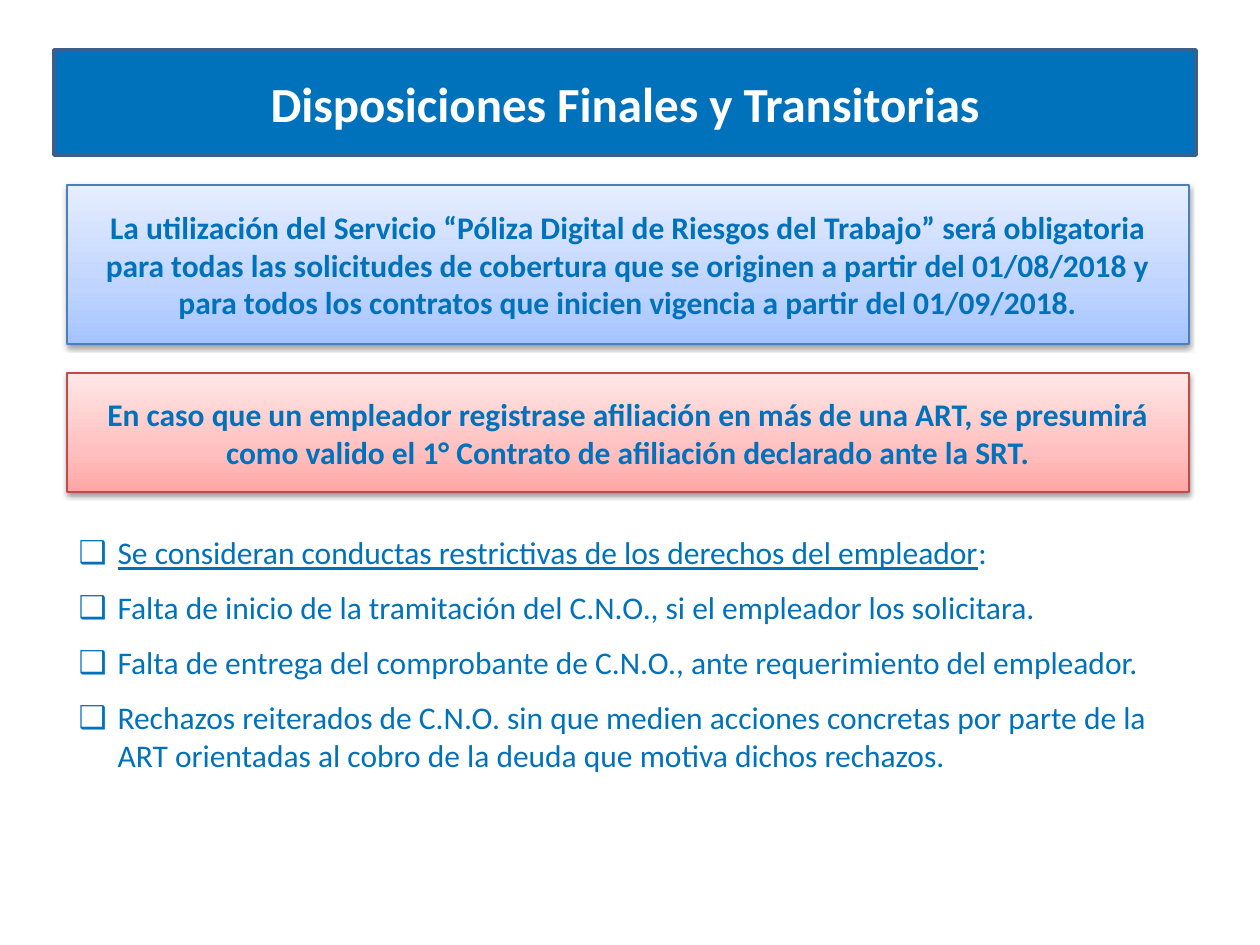
from lxml import etree
from pptx import Presentation
from pptx.dml.color import RGBColor as RGB
from pptx.enum.shapes import MSO_SHAPE as Shape
from pptx.enum.text import MSO_ANCHOR as Anchor, MSO_AUTO_SIZE as Fit, PP_ALIGN as Align
from pptx.oxml import parse_xml
from pptx.oxml.ns import nsdecls, qn
from pptx.util import Pt

PX = 914400 / 126
INK = {"blue": "0072BC", "edge": "3A5F8C", "white": "FFFFFF", "black": "000000"}


def place(shape, *box):
    shape.left, shape.top, shape.width, shape.height = [int(n * PX) for n in box]


def style(para, size, color, bold=False):
    for run in para.runs:
        font = run.font
        font.name, font.size, font.bold = "Calibri", Pt(size), bold
        font.color.rgb = RGB.from_string(INK[color])


deck = Presentation()
deck.slide_width, deck.slide_height = int(1260 * PX), int(945 * PX)
slide = deck.slides.add_slide(deck.slide_layouts[1])

title = slide.shapes.title
place(title, 54, 50, 1142, 105)
geom = etree.SubElement(title.element.spPr, qn("a:prstGeom"), prst="roundRect")
etree.SubElement(geom, qn("a:avLst"))
title.fill.solid()
title.fill.fore_color.rgb = RGB.from_string(INK["blue"])
title.line.color.rgb = RGB.from_string(INK["edge"])
title.line.width = Pt(2)
title.text_frame.text = "Disposiciones Finales y Transitorias"
title.text_frame.auto_size = Fit.NONE
title.text_frame.vertical_anchor = Anchor.MIDDLE
style(title.text_frame.paragraphs[0], 28, "white", True)

cards = [
    (185, 159, ["A4C4FF", "BFD4FF", "E6EEFF"], "4B7EBC",
     "La utilización del Servicio “Póliza Digital de Riesgos del Trabajo” será obligatoria "
     "para todas las solicitudes de cobertura que se originen a partir del 01/08/2018 y "
     "para todos los contratos que inicien vigencia a partir del 01/09/2018."),
    (373, 119, ["FFA6A5", "FFC0BF", "FFE7E7"], "BF4C48",
     "En caso que un empleador registrase afiliación en más de una ART, se presumirá "
     "como valido el 1° Contrato de afiliación declarado ante la SRT."),
]
for top, high, tones, edge, text in cards:
    card = slide.shapes.add_shape(Shape.RECTANGLE, 0, 0, 0, 0)
    place(card, 67, top, 1122, high)
    stops = "".join(
        f'<a:gs pos="{pos}"><a:srgbClr val="{tone}"/></a:gs>'
        for pos, tone in zip((0, 35000, 100000), tones))
    grad = parse_xml(
        f'<a:gradFill {nsdecls("a")} rotWithShape="1"><a:gsLst>{stops}</a:gsLst>'
        '<a:lin ang="16200000" scaled="0"/></a:gradFill>')
    card.element.spPr.find(qn("a:prstGeom")).addnext(grad)
    card.line.color.rgb = RGB.from_string(edge)
    card.line.width = Pt(0.75)
    card.shadow.inherit = False
    card.element.spPr.find(qn("a:effectLst")).append(parse_xml(
        f'<a:outerShdw {nsdecls("a")} blurRad="{Pt(3.1)}" dist="{Pt(1.6)}" dir="5400000" '
        f'rotWithShape="0"><a:srgbClr val="{INK["black"]}"><a:alpha val="38000"/>'
        '</a:srgbClr></a:outerShdw>'))
    frame = card.text_frame
    frame.word_wrap = True
    frame.vertical_anchor = Anchor.MIDDLE
    frame.text = text
    frame.paragraphs[0].alignment = Align.CENTER
    style(frame.paragraphs[0], 18, "blue", True)

body = slide.placeholders[1]
place(body, 66, 527, 1124, 255)
frame = body.text_frame
frame.auto_size = Fit.NONE
frame.text = "\n".join([
    "Se consideran conductas restrictivas de los derechos del empleador",
    "Falta de inicio de la tramitación del C.N.O., si el empleador los solicitara.",
    "Falta de entrega del comprobante de C.N.O., ante requerimiento del empleador.",
    "Rechazos reiterados de C.N.O. sin que medien acciones concretas por parte de la "
    "ART orientadas al cobro de la deuda que motiva dichos rechazos.",
])
lead, *items = frame.paragraphs
lead.add_run().text = ":"
for para in frame.paragraphs:
    item = para is not lead
    hang = int(39 * PX) if item else 0
    props = para._p.get_or_add_pPr()
    props.set("marL", str(hang))
    props.set("indent", str(-hang))
    if item:
        etree.SubElement(props, qn("a:buChar"), char="❑")
    else:
        etree.SubElement(props, qn("a:buNone"))
    para.space_before = Pt(9.8 if item else 0)
    style(para, 18, "blue")
lead.runs[0].font.underline = True

deck.save("out.pptx")
